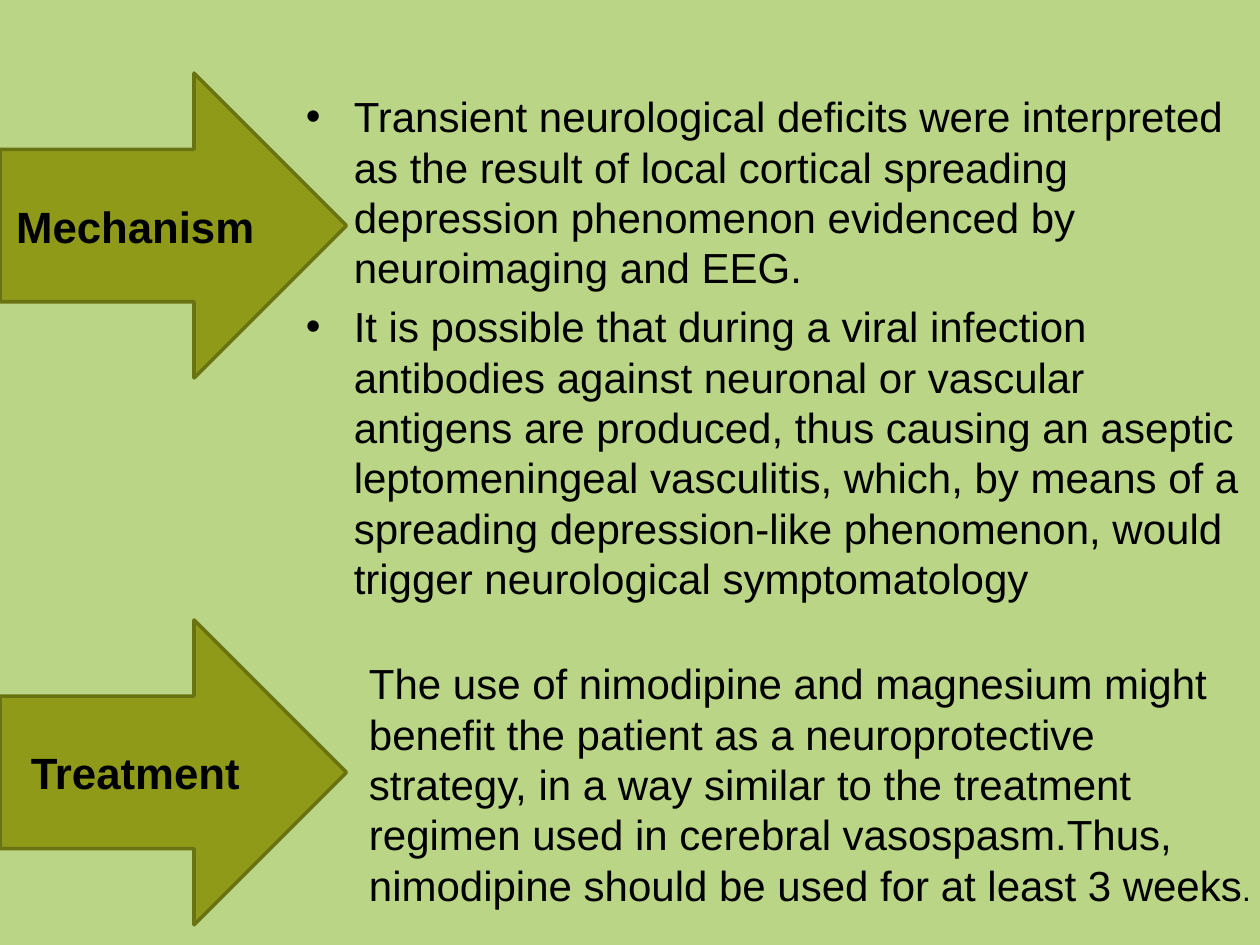
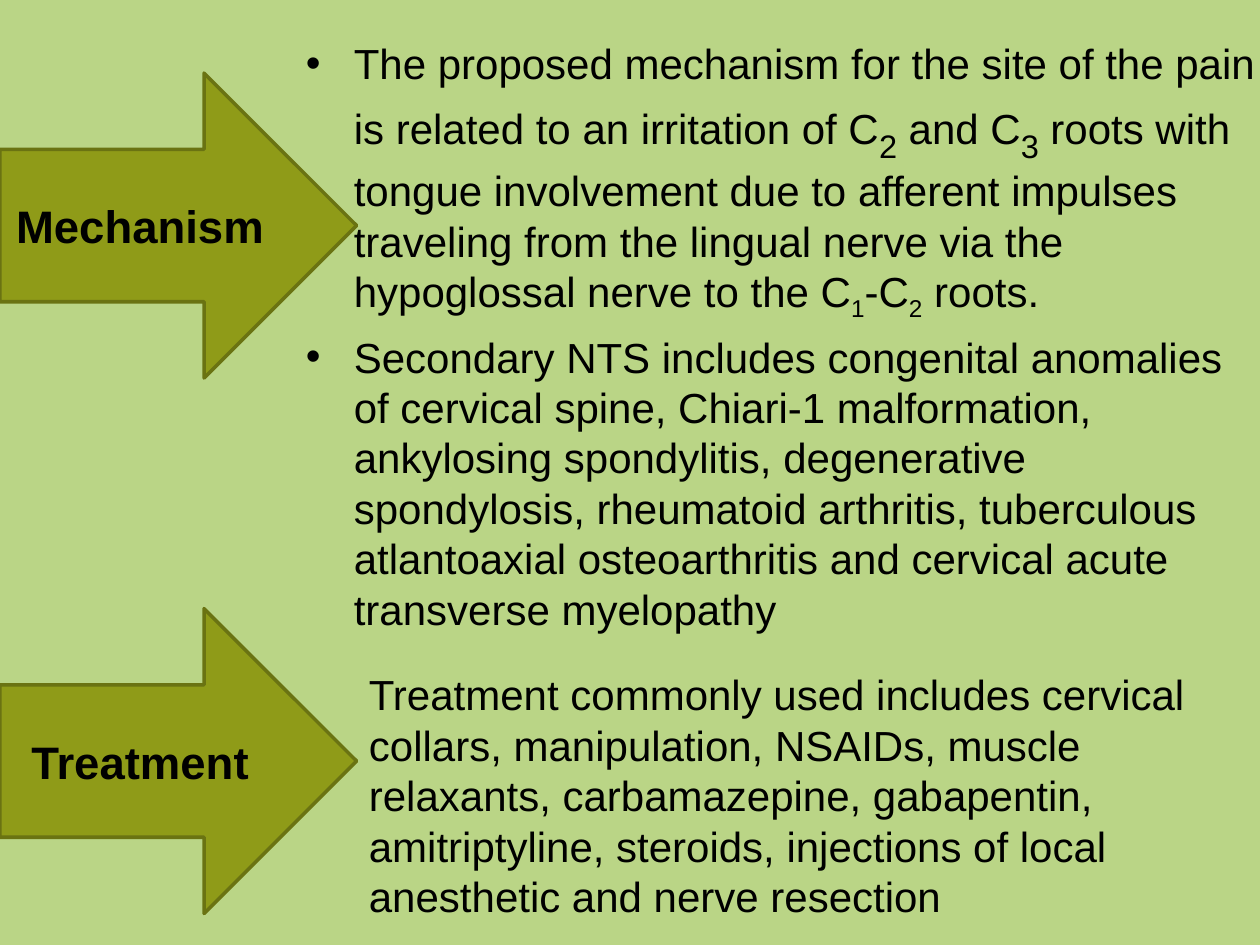
import pptx
import pptx.dml.color
import pptx.enum.shapes
import pptx.enum.text
import pptx.util
from lxml import etree
from pptx.oxml.ns import qn
from pptx.util import Inches

BACKGROUND = pptx.dml.color.RGBColor(0xBA, 0xD5, 0x86)
ARROW_FILL = pptx.dml.color.RGBColor(0x8F, 0x9B, 0x18)
ARROW_LINE = pptx.dml.color.RGBColor(0x6A, 0x73, 0x12)
TEXT_COLOR = pptx.dml.color.RGBColor(0, 0, 0)
FONT = "Arial"
BODY_SIZE = 24
ARROW_HEIGHT = 2.42

VASCULITIS = {
    "mechanism_box": (2.33, 0.67, 7.67, 4.95),
    "mechanism": [
        ["Transient neurological deficits were interpreted as the result of local "
         "cortical spreading depression phenomenon evidenced by neuroimaging and EEG."],
        ["It is possible that during a viral infection antibodies against neuronal or "
         "vascular antigens are produced, thus causing an aseptic leptomeningeal "
         "vasculitis, which, by means of a spreading depression-like phenomenon, would "
         "trigger neurological symptomatology"],
    ],
    "treatment_box": (2.83, 5.17, 7.25, 2.12),
    "treatment": [
        "The use of nimodipine and magnesium might benefit the patient as a "
        "neuroprotective strategy, in a way similar to the treatment regimen used in "
        "cerebral vasospasm.Thus, nimodipine should be used for at least 3 weeks",
        (".", 18, False),
    ],
    "arrow_width": 2.75,
    "arrow_tops": (0.58, 4.92),
    "label_size": 25,
}

NECK_TONGUE = {
    "mechanism_box": (2.33, 0.25, 7.78, 4.92),
    "mechanism": [
        ["The proposed mechanism for the site of the pain is related to an irritation of C",
         ("2", 32, True), " and C", ("3", 32, True),
         " roots with tongue involvement due to afferent impulses traveling from the "
         "lingual nerve via the hypoglossal nerve to the C",
         ("1", BODY_SIZE, True), "-C", ("2", BODY_SIZE, True), " roots."],
        ["Secondary NTS includes congenital anomalies of cervical spine, Chiari-1 "
         "malformation, ankylosing spondylitis, degenerative spondylosis, rheumatoid "
         "arthritis, tuberculous atlantoaxial osteoarthritis and cervical acute "
         "transverse myelopathy"],
    ],
    "treatment_box": (2.83, 5.26, 6.83, 2.12),
    "treatment": [
        "Treatment commonly used includes cervical collars, manipulation, NSAIDs, muscle "
        "relaxants, carbamazepine, gabapentin, amitriptyline, steroids, injections of "
        "local anesthetic and nerve resection",
    ],
    "arrow_width": 2.83,
    "arrow_tops": (0.58, 4.83),
    "label_size": 26,
}


def style_font(font, size, bold=False):
    """Apply the shared typeface and colour at a given size."""
    font.name = FONT
    font.size = pptx.util.Pt(size)
    font.bold = bold
    font.color.rgb = TEXT_COLOR


def add_bullet(paragraph):
    """Give a paragraph a hanging round bullet."""
    properties = paragraph._p.get_or_add_pPr()
    properties.set("marL", str(Inches(0.38)))
    properties.set("indent", str(-Inches(0.38)))
    etree.SubElement(properties, qn("a:buFont")).set("typeface", FONT)
    etree.SubElement(properties, qn("a:buChar")).set("char", "•")


def add_text(slide, box, paragraphs, bulleted=False):
    """Add a wrapped text box whose pieces are strings or (text, size, subscript)."""
    text_frame = slide.shapes.add_textbox(*map(Inches, box)).text_frame
    text_frame.word_wrap = True
    for index, pieces in enumerate(paragraphs):
        paragraph = text_frame.add_paragraph() if index else text_frame.paragraphs[0]
        if bulleted:
            add_bullet(paragraph)
        if index:
            paragraph.space_before = pptx.util.Pt(0.2 * BODY_SIZE)
        for piece in pieces:
            text, size, subscript = (piece, BODY_SIZE, False) if isinstance(piece, str) else piece
            run = paragraph.add_run()
            run.text = text
            style_font(run.font, size)
            if subscript:
                run._r.get_or_add_rPr().set("baseline", "-25000")


def add_label_arrow(slide, box, label, size):
    """Add a right arrow with a bold centred label."""
    arrow = slide.shapes.add_shape(
        pptx.enum.shapes.MSO_SHAPE.RIGHT_ARROW, *map(Inches, box))
    arrow.shadow.inherit = False
    arrow.fill.solid()
    arrow.fill.fore_color.rgb = ARROW_FILL
    arrow.line.color.rgb = ARROW_LINE
    arrow.line.width = pptx.util.Pt(2)
    arrow.text_frame.text = label
    arrow.text_frame.vertical_anchor = pptx.enum.text.MSO_ANCHOR.MIDDLE
    paragraph = arrow.text_frame.paragraphs[0]
    paragraph.alignment = pptx.enum.text.PP_ALIGN.CENTER
    style_font(paragraph.runs[0].font, size, bold=True)


def add_disorder_slide(presentation, disorder):
    """Add a slide explaining the mechanism and treatment of one disorder."""
    slide = presentation.slides.add_slide(presentation.slide_layouts[6])
    slide.background.fill.solid()
    slide.background.fill.fore_color.rgb = BACKGROUND
    add_text(slide, disorder["mechanism_box"], disorder["mechanism"], bulleted=True)
    add_text(slide, disorder["treatment_box"], [disorder["treatment"]])
    for label, top in zip(("Mechanism", "Treatment"), disorder["arrow_tops"]):
        box = (0, top, disorder["arrow_width"], ARROW_HEIGHT)
        add_label_arrow(slide, box, label, disorder["label_size"])


def main():
    """Build and save the presentation."""
    presentation = pptx.Presentation()
    presentation.slide_width = Inches(10)
    presentation.slide_height = Inches(7.5)
    for disorder in (VASCULITIS, NECK_TONGUE):
        add_disorder_slide(presentation, disorder)
    presentation.save("out.pptx")


if __name__ == "__main__":
    main()
